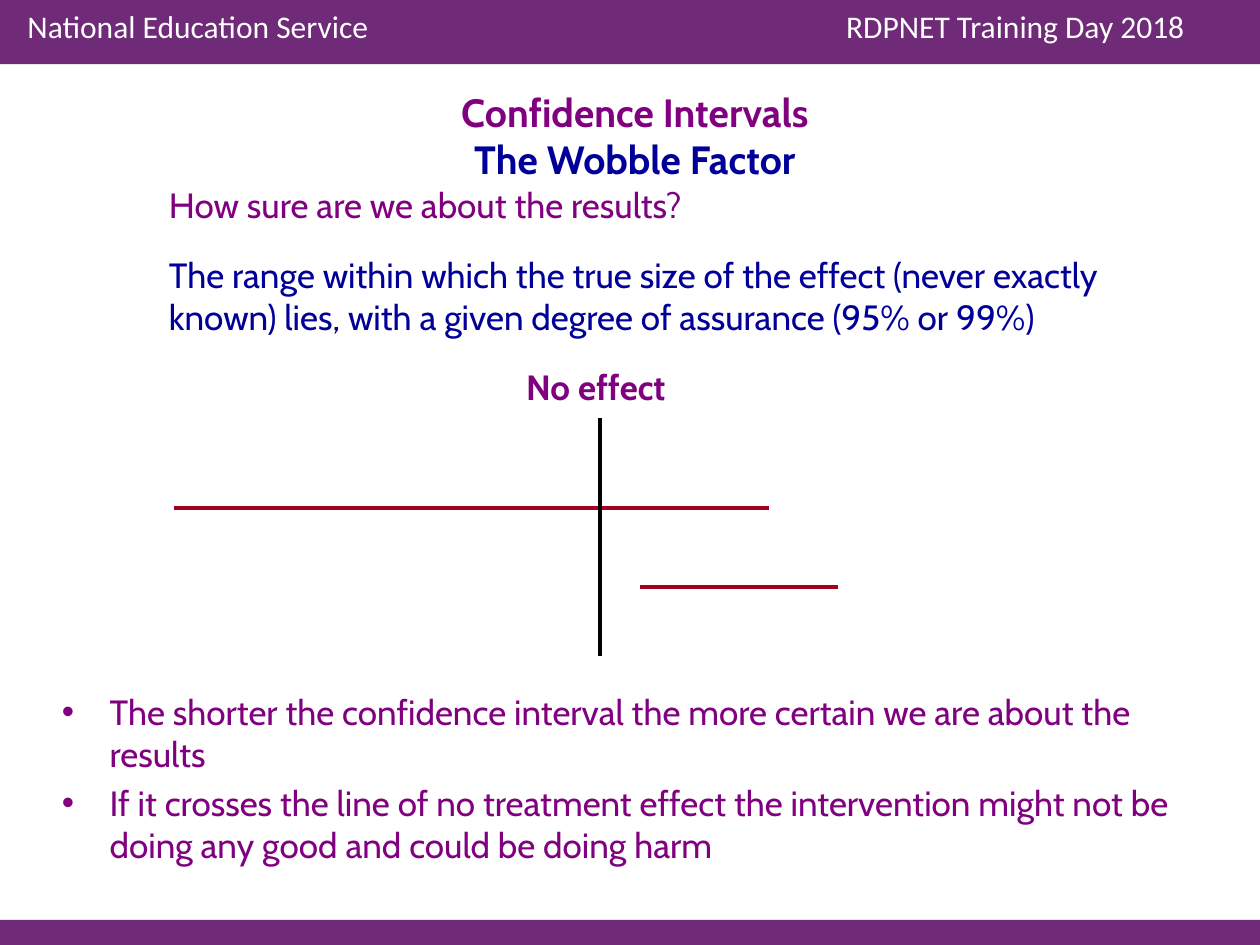
from lxml import etree
from pptx import Presentation
from pptx.dml.color import RGBColor
from pptx.enum.shapes import MSO_CONNECTOR, MSO_SHAPE
from pptx.enum.text import MSO_ANCHOR, MSO_AUTO_SIZE, PP_ALIGN
from pptx.oxml.ns import qn
from pptx.util import Inches, Pt

LEFT, CENTER, RIGHT = PP_ALIGN.LEFT, PP_ALIGN.CENTER, PP_ALIGN.RIGHT
TOP = MSO_ANCHOR.TOP
NO_FIT = MSO_AUTO_SIZE.NONE
STRAIGHT = MSO_CONNECTOR.STRAIGHT
RECT = MSO_SHAPE.RECTANGLE

COLORS = {
    "band": "6F2A78",
    "purple": "800080",
    "navy": "000099",
    "red": "A50021",
    "black": "000000",
    "white": "FFFFFF",
}


class SlideBuilder:
    """Holds the text style and the current slide."""

    font = "Cabin"
    size = 20
    line_width = 2.25

    def __init__(self, slide):
        self.s = slide

    def band(self, top, height):
        sp = self.s.shapes.add_shape(RECT, 0, Inches(top), Inches(10), Inches(height))
        sp.shadow.inherit = False
        sp.fill.solid()
        sp.fill.fore_color.rgb = RGBColor.from_string(COLORS["band"])
        sp.line.fill.background()

    def line(self, x1, y1, x2, y2, color):
        sp = self.s.shapes.add_connector(STRAIGHT, *map(Inches, (x1, y1, x2, y2)))
        sp.line.color.rgb = RGBColor.from_string(COLORS[color])
        sp.line.width = Pt(self.line_width)
        etree.SubElement(sp._element.spPr, qn("a:effectLst"))

    def textbox(self, box):
        return self.frame(self.s.shapes.add_textbox(0, 0, 0, 0), box)

    def frame(self, sp, box):
        """Place a text shape and return its text frame, ready to fill."""
        for name, value in zip(("left", "top", "width", "height"), box):
            setattr(sp, name, Inches(value))
        tf = sp.text_frame
        for name, value in {"word_wrap": True, "auto_size": NO_FIT,
                            "vertical_anchor": TOP}.items():
            setattr(tf, name, value)
        return tf

    def paragraph(self, tf, runs, align=LEFT, before=0, after=0,
                  margin=0, bullet=None, **font):
        """Write (text, color) runs, one per line, into the next paragraph."""
        p = tf.paragraphs[0] if not tf.text else tf.add_paragraph()
        for name, value in {"alignment": align, "line_spacing": 1.0,
                            "space_before": Pt(before),
                            "space_after": Pt(after)}.items():
            setattr(p, name, value)
        pPr = p._p.get_or_add_pPr()
        pPr.set("marL", str(Inches(margin)))
        pPr.set("indent", str(Inches(-margin if bullet else 0)))
        if bullet:
            etree.SubElement(pPr, qn("a:buFont"), typeface="Arial")
            etree.SubElement(pPr, qn("a:buChar"), char=bullet)
        else:
            etree.SubElement(pPr, qn("a:buNone"))
        style = {"name": self.font, "size": self.size, "bold": False, **font}
        style["size"] = Pt(style["size"])
        for i, (text, color) in enumerate(runs):
            if i:
                p.add_line_break()
            r = p.add_run()
            r.text = text
            r.font.color.rgb = RGBColor.from_string(COLORS[color])
            for name, value in style.items():
                setattr(r.font, name, value)


def main():
    prs = Presentation()
    prs.slide_width, prs.slide_height = Inches(10), Inches(7.5)
    s = prs.slides.add_slide(prs.slide_layouts[3])
    title, definition, conclusions = s.placeholders
    b = SlideBuilder(s)

    b.band(0, 0.51)
    b.band(7.3, 0.2)
    for text, left, align in (("National Education Service", 0.12, LEFT),
                              ("RDPNET Training Day 2018", 5.5, RIGHT)):
        tf = b.textbox((left, 0.01, 4, 0.4))
        b.paragraph(tf, [(text, "white")], align, name="Calibri", size=18)

    tf = b.frame(title, (0.84, 0.65, 8.4, 0.76))
    b.paragraph(tf, [("Confidence Intervals", "purple"), ("The Wobble Factor", "navy")],
                CENTER, size=22.5, bold=True)

    tf = b.frame(definition, (0.84, 1.41, 8.4, 1.4))
    b.paragraph(tf, [("How sure are we about the results?", "purple")],
                after=12, margin=0.4)
    b.paragraph(tf, [("The range within which the true size of the effect (never exactly "
                      "known) lies, with a given degree of assurance (95% or 99%)", "navy")],
                before=4, margin=0.4)

    tf = b.textbox((3.98, 2.85, 1.5, 0.44))
    b.paragraph(tf, [("No effect", "purple")], CENTER, bold=True)
    b.line(5.08, 4.66, 6.65, 4.66, "red")
    b.line(1.38, 4.03, 6.1, 4.03, "red")
    b.line(4.76, 3.32, 4.76, 5.21, "black")

    tf = b.frame(conclusions, (0.39, 5.43, 9.05, 1.51))
    for text in ("The shorter the confidence interval the more certain we are about the results",
                 "If it crosses the line of no treatment effect the intervention might not be "
                 "doing any good and could be doing harm"):
        b.paragraph(tf, [(text, "purple")], before=4, margin=0.38, bullet="•")

    prs.save("out.pptx")


if __name__ == "__main__":
    main()
